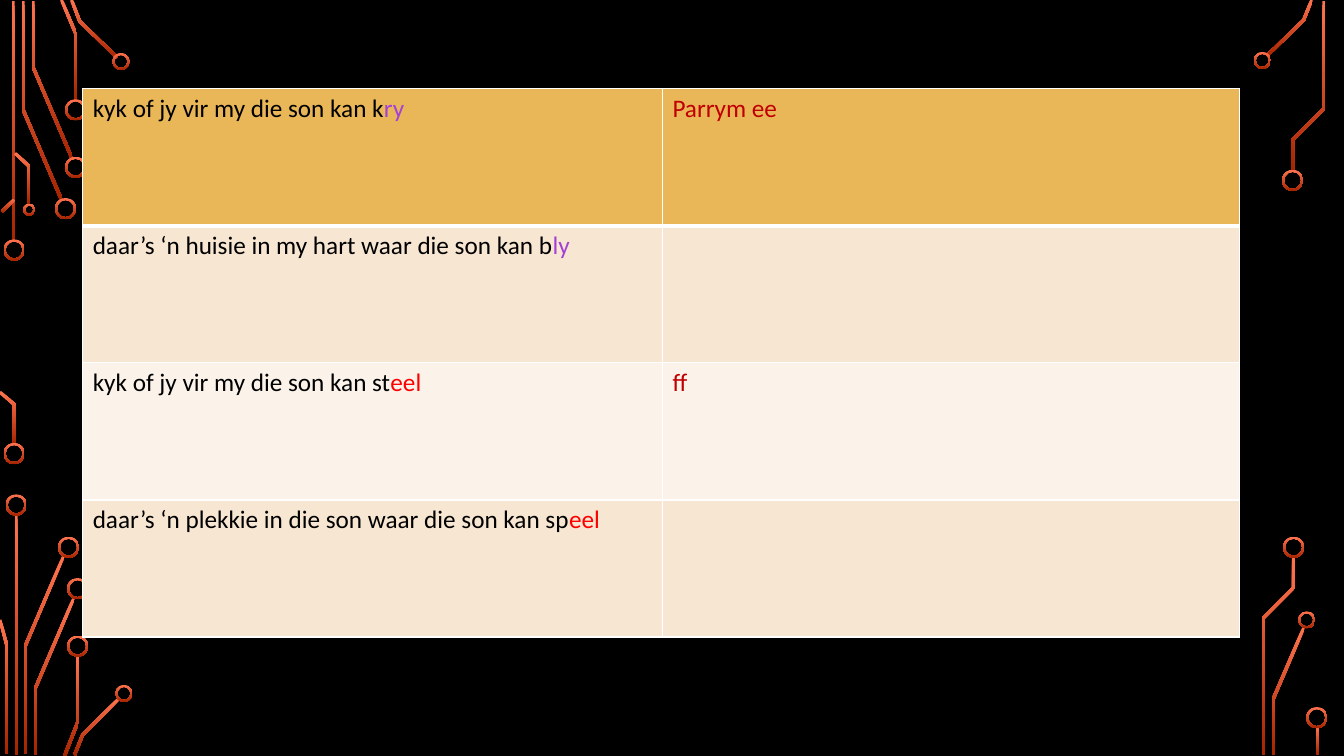
import math

import pptx
import pptx.dml.color
import pptx.enum.shapes
import pptx.oxml
import pptx.oxml.ns
import pptx.util
from pptx.util import Inches

COLORS = {
    "background": "000000",
    "trace_top": "FF744E",
    "trace_bottom": "A62400",
    "border": "FFFFFF",
    "header": "E9B758",
    "band_dark": "F7E6D1",
    "band_light": "FBF3EA",
    "text": "000000",
    "purple": "A540D7",
    "red": "FF0000",
    "dark_red": "C00000",
}

TRACES = [
    [(0.13, 0.01), (0.13, 2.4)],
    [(0.61, 1.98), (0.23, 1.09), (0.23, 0.01)],
    [(0.71, 1.56), (0.33, 0.67), (0.33, 0.01)],
    [(0.75, 1), (0.75, 0.33), (0.61, 0)],
    [(1.16, 0.57), (0.79, 0.21), (0.71, 0)],
    [(0.02, 2.1), (0.14, 1.98)],
    [(0.14, 4.41), (0.14, 4.01), (0, 3.89)],
    [(0.29, 2.03), (0.29, 1.65), (0.15, 1.52)],
    [(0.16, 5.1), (0.16, 7.49)],
    [(0.25, 7.48), (0.25, 6.41), (0.63, 5.52)],
    [(0.07, 7.48), (0.07, 6.41), (0, 6.15)],
    [(0.35, 7.49), (0.35, 6.83), (0.73, 5.94)],
    [(0.64, 7.5), (0.77, 7.17), (0.77, 6.5)],
    [(0.74, 7.49), (0.82, 7.29), (1.18, 6.93)],
    [(12.57, 0.55), (12.93, 0.2), (13.01, 0)],
    [(12.63, 7.49), (12.63, 6.93), (12.93, 6.23)],
    [(12.82, 1.69), (12.82, 1.39), (13.13, 1.08), (13.13, 0.01)],
    [(12.53, 7.49), (12.53, 6.13), (12.83, 5.83), (12.83, 5.52)],
    [(13.07, 7.21), (13.07, 7.49)],
]

RING_CENTERS = {
    0.21: [
        (0.14, 2.48), (0.14, 4.5), (0.65, 2.07), (0.75, 1.66), (0.75, 1.09),
        (0.16, 5.01), (0.68, 5.43), (0.77, 5.84), (0.77, 6.41),
        (12.82, 1.79), (12.83, 5.43), (13.06, 7.12),
    ],
    0.17: [(1.2, 0.61), (1.23, 6.88), (12.52, 0.6), (12.96, 6.15)],
    0.12: [(0.29, 2.08)],
}

POEM_ROWS = [
    ("header", [("kyk of jy vir my die son kan k", "text"), ("ry", "purple")],
     [("Parrym ee", "dark_red")]),
    ("band_dark", [("daar’s ‘n huisie in my hart waar die son kan b", "text"),
                   ("ly", "purple")], []),
    ("band_light", [("kyk of jy vir my die son kan st", "text"), ("eel", "red")],
     [("ff", "dark_red")]),
    ("band_dark", [("daar’s ‘n plekkie in die son waar die son kan sp", "text"),
                   ("eel", "red")], []),
]


class CircuitSlide:
    trace_width = 0.03
    ring_thickness = 0.02
    font_format = {"name": "Calibri", "size": pptx.util.Pt(18), "bold": False}

    def __init__(self, slide):
        self.slide = slide
        fill = slide.background.fill
        fill.solid()
        fill.fore_color.rgb = self.color("background")

    def color(self, name):
        return pptx.dml.color.RGBColor.from_string(COLORS[name])

    def paint(self, shape):
        shape.shadow.inherit = False
        shape.line.fill.background()
        shape.fill.gradient()
        shape.fill.gradient_angle = 270
        for stop, name in zip(shape.fill.gradient_stops, ("trace_top", "trace_bottom")):
            stop.color.rgb = self.color(name)

    def trace(self, course):
        normals = []
        for (x1, y1), (x2, y2) in zip(course, course[1:]):
            length = math.hypot(x2 - x1, y2 - y1)
            normals.append(((y1 - y2) / length, (x2 - x1) / length))
        before, after = normals[:1] + normals, normals + normals[-1:]
        left, right = [], []
        for (x, y), (ax, ay), (bx, by) in zip(course, before, after):
            reach = self.trace_width / 2 / (1 + ax * bx + ay * by)
            dx, dy = (ax + bx) * reach, (ay + by) * reach
            left.append((Inches(x + dx), Inches(y + dy)))
            right.append((Inches(x - dx), Inches(y - dy)))
        outline = left + right[::-1]
        builder = self.slide.shapes.build_freeform(*outline[0])
        builder.add_line_segments(outline[1:], close=True)
        self.paint(builder.convert_to_shape())

    def ring(self, center, diameter):
        x, y = center
        node = self.slide.shapes.add_shape(
            pptx.enum.shapes.MSO_SHAPE.DONUT,
            Inches(x - diameter / 2), Inches(y - diameter / 2),
            Inches(diameter), Inches(diameter))
        node.adjustments[0] = self.ring_thickness / diameter
        self.paint(node)

    def borders(self, cell, widths):
        properties = cell._tc.get_or_add_tcPr()
        for side, width in widths.items():
            properties.append(pptx.oxml.parse_xml(
                f'<a:ln{side} {pptx.oxml.ns.nsdecls("a")} w="{pptx.util.Pt(width)}">'
                f'<a:solidFill><a:srgbClr val="{COLORS["border"]}"/></a:solidFill>'
                f'</a:ln{side}>'))

    def verse(self, cell, pieces):
        paragraph = cell.text_frame.paragraphs[0]
        for words, color in pieces:
            run = paragraph.add_run()
            run.text = words
            for attribute, value in self.font_format.items():
                setattr(run.font, attribute, value)
            run.font.color.rgb = self.color(color)

    def table(self, rows, left, top, column_widths, row_height):
        grid = self.slide.shapes.add_table(
            len(rows), len(column_widths), Inches(left), Inches(top),
            Inches(sum(column_widths)), Inches(row_height * len(rows))).table
        for column, width in zip(grid.columns, column_widths):
            column.width = Inches(width)
        for index, (fill, *texts) in enumerate(rows):
            grid.rows[index].height = Inches(row_height)
            widths = {"L": 1, "R": 1, "T": 3 if index == 1 else 1,
                      "B": 3 if index == 0 else 1}
            for cell, pieces in zip(grid.rows[index].cells, texts):
                self.borders(cell, widths)
                cell.fill.solid()
                cell.fill.fore_color.rgb = self.color(fill)
                self.verse(cell, pieces)


def main():
    deck = pptx.Presentation()
    deck.slide_width, deck.slide_height = Inches(13.33), Inches(7.5)
    poem = CircuitSlide(deck.slides.add_slide(deck.slide_layouts[6]))
    for course in TRACES:
        poem.trace(course)
    for diameter, centers in RING_CENTERS.items():
        for center in centers:
            poem.ring(center, diameter)
    poem.table(POEM_ROWS, 0.82, 0.88, (5.75, 5.72), 1.36)
    deck.save("out.pptx")


if __name__ == "__main__":
    main()
